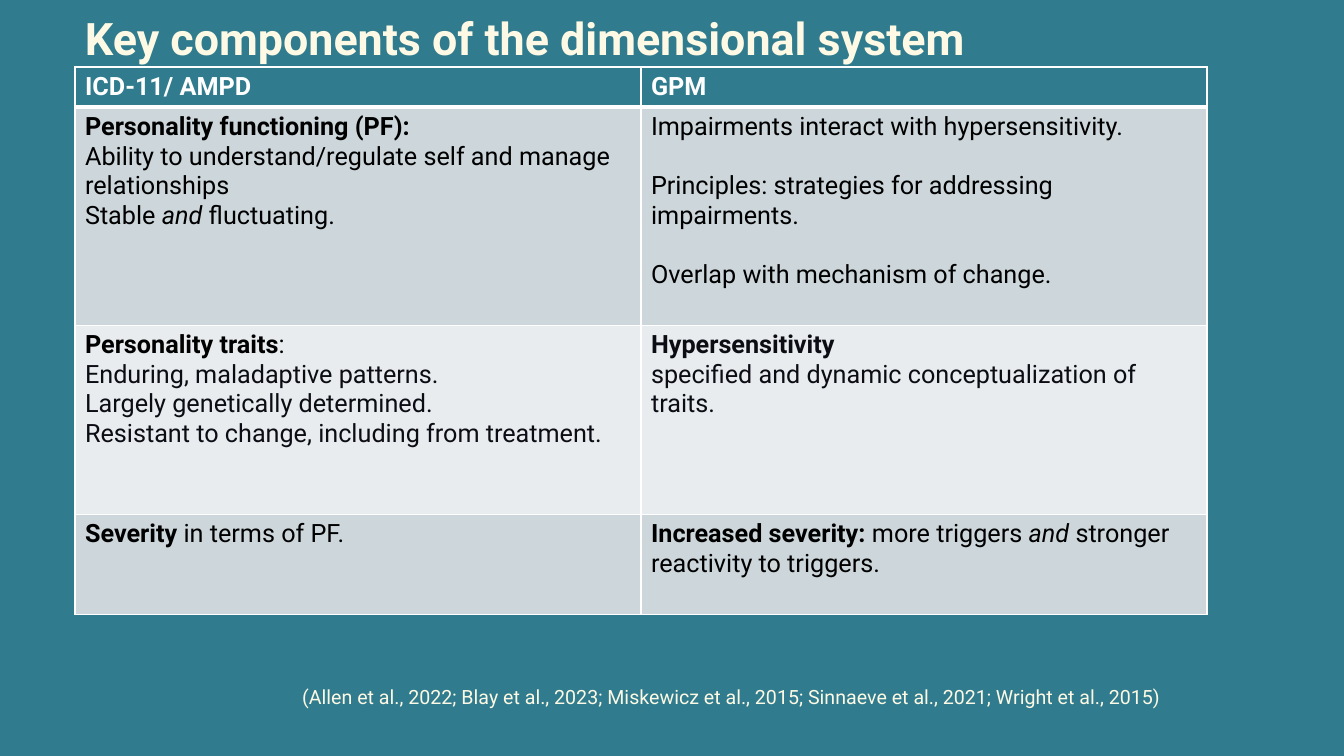
from dataclasses import dataclass

from lxml import etree
from pptx import Presentation
from pptx.dml.color import RGBColor
from pptx.enum.text import MSO_ANCHOR, PP_ALIGN
from pptx.oxml.ns import qn
from pptx.util import Emu, Pt

TOP, MIDDLE = MSO_ANCHOR.TOP, MSO_ANCHOR.MIDDLE
LEFT, RIGHT = PP_ALIGN.LEFT, PP_ALIGN.RIGHT
PAGE_WIDTH, PAGE_HEIGHT = 1344, 756
SCALE = 12192000 / PAGE_WIDTH


@dataclass(frozen=True)
class Theme:
    font: str = "Roboto"
    teal: str = "307C8E"
    cream: str = "FDF9E4"
    white: str = "FFFFFF"
    black: str = "000000"
    ink: str = "0C0C14"
    band_dark: str = "CDD7DB"
    band_light: str = "E8ECEE"
    title_size: int = 32
    table_size: int = 18
    citation_size: int = 14
    gap: int = 21  # one table text line, in points


THEME = Theme()
ROW_HEIGHTS = (40, 218, 189, 100)
ROW_FILLS = (THEME.teal, THEME.band_dark, THEME.band_light, THEME.band_dark)


@dataclass(frozen=True)
class Line:
    """One paragraph: spans of (text, style), style being "", "b" or "i"."""
    spans: tuple
    color: str = THEME.black
    before: int = 0


def plain(text, color=THEME.black, before=0):
    return Line(((text, ""),), color, before)


def bold(text, color=THEME.black):
    return Line(((text, "b"),), color)


ROWS = (
    ((bold("ICD-11/ AMPD", THEME.white),), (bold("GPM", THEME.white),)),
    (
        (
            bold("Personality functioning (PF):"),
            plain("Ability to understand/regulate self and manage relationships"),
            Line((("Stable ", ""), ("and", "i"), (" fluctuating.", ""))),
        ),
        (
            plain("Impairments interact with hypersensitivity."),
            plain("Principles: strategies for addressing impairments.", before=THEME.gap),
            plain("Overlap with mechanism of change.", before=THEME.gap),
        ),
    ),
    (
        (
            Line((("Personality traits", "b"), (":", ""))),
            plain("Enduring, maladaptive patterns.", THEME.ink),
            plain("Largely genetically determined.", THEME.ink),
            plain("Resistant to change, including from treatment.", THEME.ink),
        ),
        (
            bold("Hypersensitivity", THEME.ink),
            plain("specified and dynamic conceptualization of traits.", THEME.ink),
        ),
    ),
    (
        (Line((("Severity ", "b"), ("in terms of PF.", ""))),),
        (Line((("Increased severity: ", "b"), ("more triggers ", ""),
               ("and", "i"), (" stronger reactivity to triggers.", ""))),),
    ),
)


def px(length):
    return Emu(round(length * SCALE))


def write_lines(frame, lines, size, align=LEFT):
    for index, line in enumerate(lines):
        para = frame.paragraphs[0] if index == 0 else frame.add_paragraph()
        para.alignment = align
        if line.before:
            para.space_before = Pt(line.before)
        para.font.name = THEME.font
        para.font.size = Pt(size)
        para.font.color.rgb = RGBColor.from_string(line.color)
        styles = {style for _, style in line.spans}
        if styles == {"b"}:
            para.font.bold = True
        for text, style in line.spans:
            span = para.add_run()
            span.text = text
            if len(styles) > 1:
                span.font.bold = style == "b"
                span.font.italic = style == "i"


def add_text(page, box, line, size, anchor, align=LEFT):
    frame = page.shapes.add_textbox(*map(px, box)).text_frame
    frame.word_wrap = True
    frame.vertical_anchor = anchor
    write_lines(frame, (line,), size, align)
    return frame


def add_title(page, box):
    frame = add_text(page, box, bold("Key components of the dimensional system", THEME.cream),
                     THEME.title_size, TOP)
    frame.paragraphs[0].line_spacing = 1.1


def add_citation(page, box):
    text = ("(Allen et al., 2022; Blay et al., 2023; Miskewicz et al., 2015; "
            "Sinnaeve et al., 2021; Wright et al., 2015)")
    add_text(page, box, plain(text, THEME.cream), THEME.citation_size, MIDDLE, RIGHT)


def set_borders(cell, widths):
    properties = cell._tc.get_or_add_tcPr()
    for side, width in widths.items():
        edge = etree.SubElement(properties, qn(f"a:ln{side}"), w=str(Pt(width)))
        fill = etree.SubElement(edge, qn("a:solidFill"))
        etree.SubElement(fill, qn("a:srgbClr"), val=THEME.white)


def add_comparison(page, box):
    columns = len(ROWS[0])
    table = page.shapes.add_table(len(ROWS), columns, *map(px, box)).table
    for column in table.columns:
        column.width = px(box[2] / columns)
    for r, (height, fill, cells) in enumerate(zip(ROW_HEIGHTS, ROW_FILLS, ROWS)):
        table.rows[r].height = px(height)
        # The rule under the header row is thicker
        widths = {"L": 1, "R": 1, "T": 3 if r == 1 else 1, "B": 3 if r == 0 else 1}
        for c, lines in enumerate(cells):
            cell = table.cell(r, c)
            set_borders(cell, widths)
            cell.fill.solid()
            cell.fill.fore_color.rgb = RGBColor.from_string(fill)
            write_lines(cell.text_frame, lines, THEME.table_size)


def main():
    deck = Presentation()
    deck.slide_width, deck.slide_height = px(PAGE_WIDTH), px(PAGE_HEIGHT)
    page = deck.slides.add_slide(deck.slide_layouts[6])
    page.background.fill.solid()
    page.background.fill.fore_color.rgb = RGBColor.from_string(THEME.teal)

    # Title, comparison table, citation
    add_title(page, (75, 0, 1210, 83))
    add_comparison(page, (75, 67, 1132, sum(ROW_HEIGHTS)))
    add_citation(page, (105, 680, 1066, 34))
    deck.save("out.pptx")


if __name__ == "__main__":
    main()
